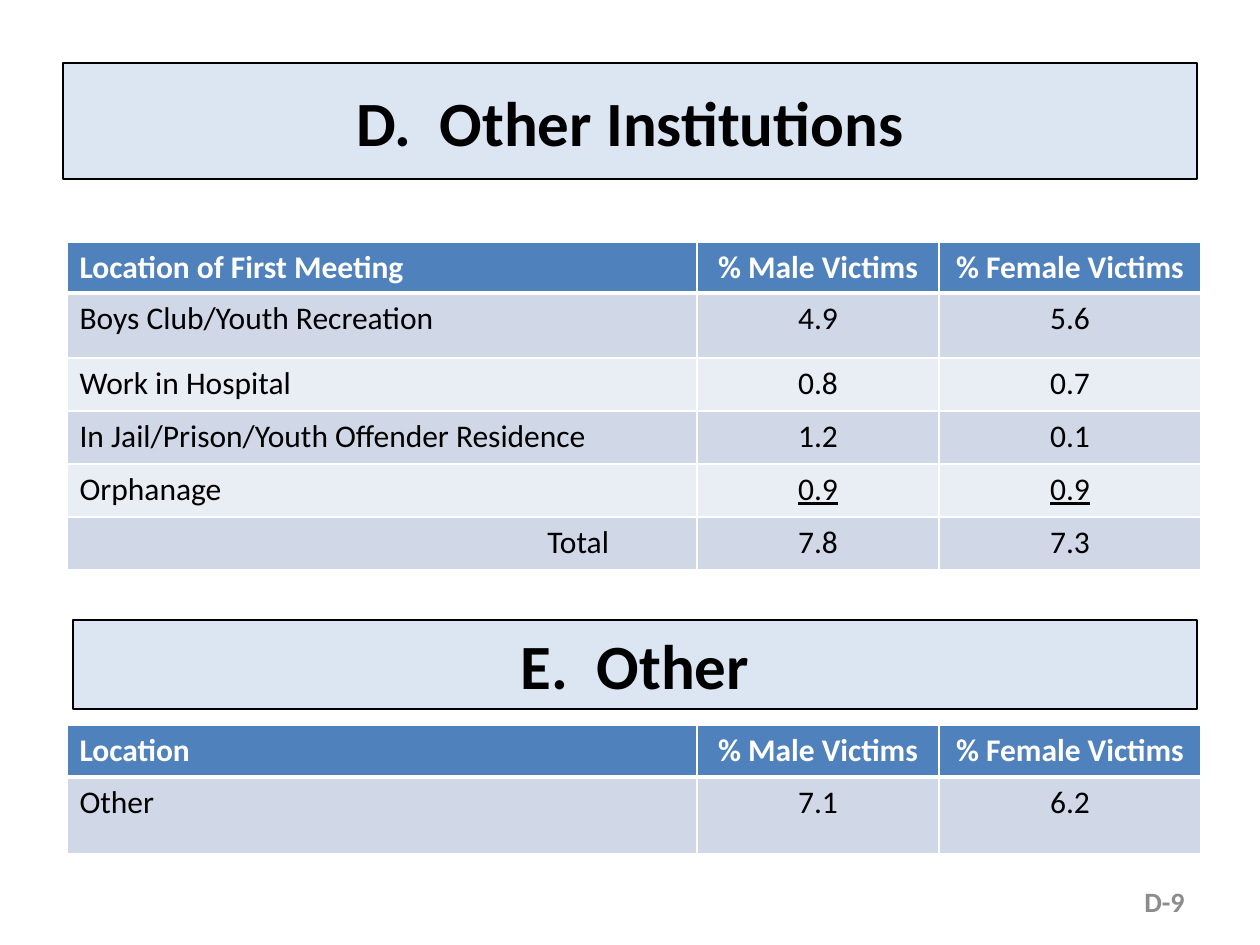
from lxml import etree
from pptx import Presentation
from pptx.dml.color import RGBColor
from pptx.enum.shapes import MSO_SHAPE
from pptx.enum.text import MSO_ANCHOR, PP_ALIGN
from pptx.oxml.ns import qn
from pptx.util import Emu, Pt

RECT = MSO_SHAPE.RECTANGLE
TOP, MIDDLE = MSO_ANCHOR.TOP, MSO_ANCHOR.MIDDLE
LEFT, CENTER, RIGHT = PP_ALIGN.LEFT, PP_ALIGN.CENTER, PP_ALIGN.RIGHT

PX_PER_INCH = 126
COLORS = {
    "black": "000000",
    "white": "FFFFFF",
    "title": "DCE6F2",
    "header": "4F81BD",
    "band_dark": "D0D8E8",
    "band_light": "E9EDF4",
    "page": "8C8C8C",
}


def px(n):
    return Emu(round(n * 914400 / PX_PER_INCH))


def rgb(name):
    return RGBColor.from_string(COLORS[name])


class SlideBuilder:
    font = "Calibri"

    def __init__(self, slide):
        self.slide = slide

    def set_text(self, tf, text, size, color, align, bold=False, underline=None):
        tf.text = text
        p = tf.paragraphs[0]
        p.alignment = align
        for r in p.runs:
            r.font.name = self.font
            r.font.size = Pt(size)
            r.font.bold = bold
            r.font.underline = underline
            r.font.color.rgb = rgb(color)

    def title_bar(self, x, y, w, h, text):
        sp = self.slide.shapes.add_shape(RECT, px(x), px(y), px(w), px(h))
        sp.shadow.inherit = False
        sp.fill.solid()
        sp.fill.fore_color.rgb = rgb("title")
        sp.line.color.rgb = rgb("black")
        sp.line.width = Pt(1.5)
        tf = sp.text_frame
        tf.word_wrap = True
        tf.vertical_anchor = MIDDLE
        self.set_text(tf, text, 36, "black", CENTER, bold=True)

    def label(self, x, y, w, h, text):
        tf = self.slide.shapes.add_textbox(px(x), px(y), px(w), px(h)).text_frame
        tf.word_wrap = True
        tf.vertical_anchor = MIDDLE
        self.set_text(tf, text, 16, "page", RIGHT, bold=True)

    def borders(self, cell, row):
        """White grid lines, with a thicker one below the header."""
        tcPr = cell._tc.get_or_add_tcPr()
        widths = {"lnL": 1, "lnR": 1, "lnT": 3 if row == 1 else 1,
                  "lnB": 3 if row == 0 else 1}
        for i, (tag, width) in enumerate(widths.items()):
            ln = etree.Element(qn(f"a:{tag}"), w=str(Pt(width)))
            fill = etree.SubElement(ln, qn("a:solidFill"))
            etree.SubElement(fill, qn("a:srgbClr"), val=COLORS["white"])
            tcPr.insert(i, ln)

    def table(self, x, y, cols, heights, rows, underlined=None, total=None):
        frame = self.slide.shapes.add_table(
            len(rows), len(cols), px(x), px(y), px(sum(cols)), px(sum(heights)))
        table = frame.table
        for column, w in zip(table.columns, cols):
            column.width = px(w)
        for i, (values, h) in enumerate(zip(rows, heights)):
            table.rows[i].height = px(h)
            header = i == 0
            band = "header" if header else ("band_light", "band_dark")[i % 2]
            for j, text in enumerate(values):
                cell = table.cell(i, j)
                cell.vertical_anchor = TOP
                cell.fill.solid()
                cell.fill.fore_color.rgb = rgb(band)
                self.borders(cell, i)
                align = CENTER if j else LEFT
                if i == total and j == 0:
                    align = RIGHT
                    cell.margin_right = px(88)
                self.set_text(cell.text_frame, text, 18,
                              "white" if header else "black", align, bold=header,
                              underline=True if i == underlined and j else None)


def main():
    prs = Presentation()
    prs.slide_width, prs.slide_height = px(1260), px(945)
    s = SlideBuilder(prs.slides.add_slide(prs.slide_layouts[6]))

    cols = [630, 242, 262]
    victims = ["% Male Victims", "% Female Victims"]

    # Section D: title and table
    s.title_bar(63, 63, 1134, 116, "D.  Other Institutions")
    s.table(67, 242, cols, [51, 65] + [53] * 4, [
        ["Location of First Meeting"] + victims,
        ["Boys Club/Youth Recreation", "4.9", "5.6"],
        ["Work in Hospital", "0.8", "0.7"],
        ["In Jail/Prison/Youth Offender Residence", "1.2", "0.1"],
        ["Orphanage", "0.9", "0.9"],
        ["Total", "7.8", "7.3"],
    ], underlined=4, total=5)

    # Section E: table and title
    s.table(67, 725, cols, [52, 77], [
        ["Location"] + victims,
        ["Other", "7.1", "6.2"],
    ])
    s.title_bar(73, 620, 1124, 89, "E.  Other")

    # Page number
    s.label(903, 876, 294, 50, "D-9")

    prs.save("out.pptx")


if __name__ == "__main__":
    main()
